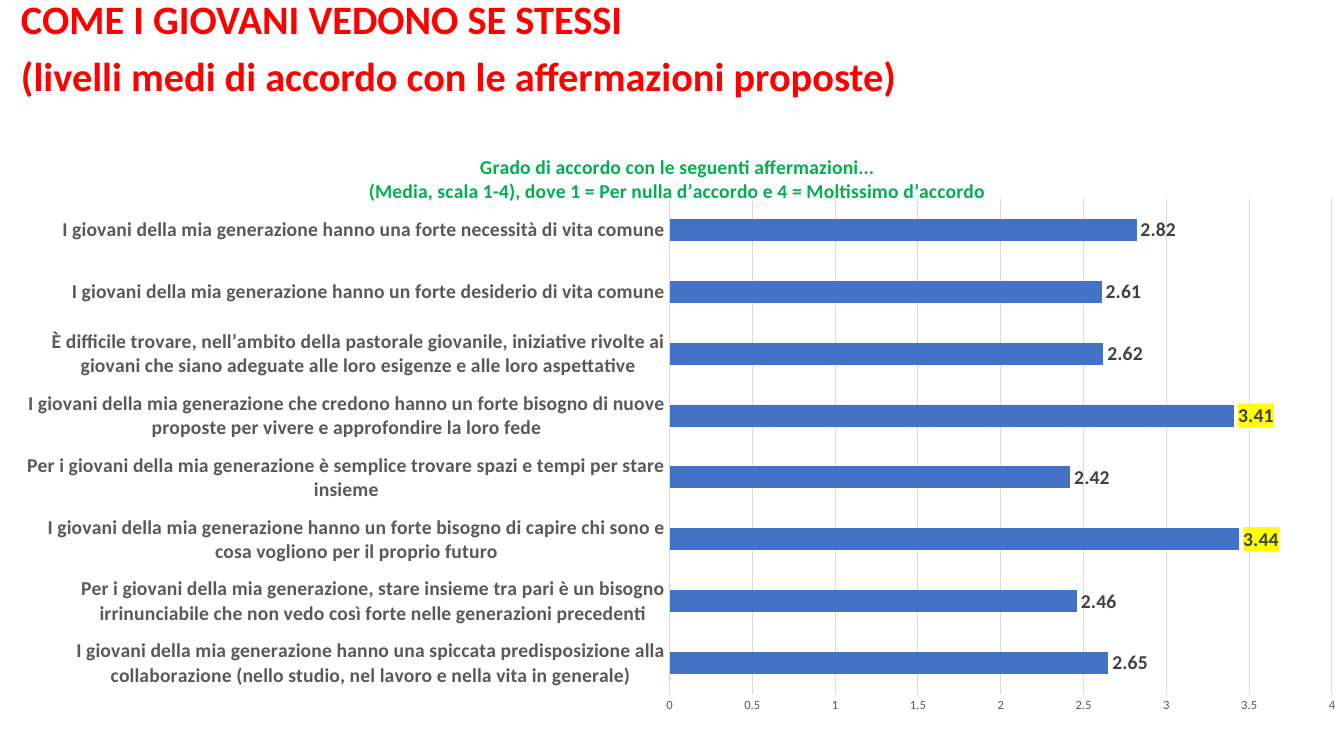
from lxml import etree
from pptx import Presentation
from pptx.chart.data import CategoryChartData
from pptx.dml.color import RGBColor
from pptx.enum.chart import XL_CHART_TYPE as ChartType, XL_LABEL_POSITION as LabelPos
from pptx.enum.chart import XL_TICK_MARK as TickMark
from pptx.enum.text import MSO_ANCHOR as Anchor
from pptx.oxml import parse_xml
from pptx.oxml.ns import nsdecls, qn
from pptx.util import Inches, Pt

FONT = "Calibri"
RED, GREEN, BLUE, YELLOW = "FF0000", "00B050", "4472C4", "FFFF00"
GRID, AXIS_TEXT, LABEL_TEXT = "D9D9D9", "595959", "404040"

# Statements from the bottom bar to the top one
STATEMENTS = [
    ("I giovani della mia generazione hanno una spiccata predisposizione alla "
     "collaborazione (nello studio, nel lavoro e nella vita in generale)", 2.65),
    ("Per i giovani della mia generazione, stare insieme tra pari è un bisogno "
     "irrinunciabile che non vedo così forte nelle generazioni precedenti", 2.46),
    ("I giovani della mia generazione hanno un forte bisogno di capire chi sono e "
     "cosa vogliono per il proprio futuro", 3.44),
    ("Per i giovani della mia generazione è semplice trovare spazi e tempi per stare "
     "insieme", 2.42),
    ("I giovani della mia generazione che credono hanno un forte bisogno di nuove "
     "proposte per vivere e approfondire la loro fede", 3.41),
    ("È difficile trovare, nell’ambito della pastorale giovanile, iniziative rivolte ai "
     "giovani che siano adeguate alle loro esigenze e alle loro aspettative", 2.62),
    ("I giovani della mia generazione hanno un forte desiderio di vita comune", 2.61),
    ("I giovani della mia generazione hanno una forte necessità di vita comune", 2.82),
]
HIGHLIGHT_FROM = 3


def color(hex_code):
    return RGBColor.from_string(hex_code)


def style_font(font, size, hex_code, bold=False):
    font.name, font.size, font.bold = FONT, Pt(size), bold
    font.color.rgb = color(hex_code)


def add_text(paragraph, text, **style):
    run = paragraph.add_run()
    run.text = text
    style_font(run.font, **style)


def add_heading(slide, left, top, width, height):
    frame = slide.shapes.add_textbox(left, top, width, height).text_frame
    frame.word_wrap = True
    frame.vertical_anchor = Anchor.MIDDLE
    heading = frame.paragraphs[0]
    heading.line_spacing = 0.9
    add_text(heading, "COME I GIOVANI VEDONO SE STESSI", size=28.8, hex_code=RED, bold=True)
    heading.add_line_break()
    add_text(heading, "(livelli medi di accordo con le affermazioni proposte)",
             size=28.8, hex_code=RED, bold=True)
    # The larger closing space opens up the second line
    add_text(heading, " ", size=39.6, hex_code=RED, bold=True)


def set_plot_area(chart, **fractions):
    plot_area = chart._chartSpace.chart.plotArea
    for old in plot_area.findall(qn("c:layout")):
        plot_area.remove(old)
    layout = parse_xml(f"<c:layout {nsdecls('c')}><c:manualLayout/></c:layout>")
    settings = {"layoutTarget": "inner", "xMode": "edge", "yMode": "edge", **fractions}
    for tag, value in settings.items():
        etree.SubElement(layout[0], qn(f"c:{tag}"), val=str(value))
    plot_area.insert(0, layout)


def highlight_label(point):
    label = point.data_label
    style_font(label.font, 14, LABEL_TEXT, bold=True)
    label.position = LabelPos.OUTSIDE_END
    fill = parse_xml(f"<c:spPr {nsdecls('c', 'a')}><a:solidFill>"
                     f'<a:srgbClr val="{YELLOW}"/></a:solidFill></c:spPr>')
    label._dLbl.find(qn("c:txPr")).addprevious(fill)


def style_axes(chart):
    statements, scores = chart.category_axis, chart.value_axis
    for axis, size, bold in ((statements, 14, True), (scores, 9, False)):
        axis.major_tick_mark = axis.minor_tick_mark = TickMark.NONE
        style_font(axis.tick_labels.font, size, AXIS_TEXT, bold)
    scores.minimum_scale, scores.maximum_scale, scores.major_unit = 0, 4, 0.5
    scores.format.line.fill.background()
    for line in (statements.format.line, scores.major_gridlines.format.line):
        line.color.rgb = color(GRID)
        line.width = Pt(0.75)


def add_agreement_chart(slide, left, top, width, height):
    data = CategoryChartData()
    data.categories = [statement for statement, _ in STATEMENTS]
    data.add_series("Media", [score for _, score in STATEMENTS])
    chart = slide.shapes.add_chart(ChartType.BAR_CLUSTERED, left, top, width, height, data).chart
    style_font(chart.font, 10, "000000")
    chart.has_legend = False

    # Title
    title = chart.chart_title.text_frame
    lines = ("Grado di accordo con le seguenti affermazioni...",
             "(Media, scala 1-4), dove 1 = Per nulla d’accordo e 4 = Moltissimo d’accordo")
    for i, line in enumerate(lines):
        paragraph = title.add_paragraph() if i else title.paragraphs[0]
        add_text(paragraph, line, size=14, hex_code=GREEN, bold=True)

    style_axes(chart)
    set_plot_area(chart, x=0.494, y=0.111, w=0.497, h=0.834)

    # Bars and their values
    plot = chart.plots[0]
    plot.gap_width = 182
    plot.vary_by_categories = False
    bars = plot.series[0]
    bars.format.fill.solid()
    bars.format.fill.fore_color.rgb = color(BLUE)
    labels = bars.data_labels
    labels.show_value = True
    labels.position = LabelPos.OUTSIDE_END
    style_font(labels.font, 14, LABEL_TEXT, bold=True)
    for i, (_, score) in enumerate(STATEMENTS):
        if score > HIGHLIGHT_FROM:
            highlight_label(bars.points[i])


def main():
    deck = Presentation()
    deck.slide_width, deck.slide_height = Inches(13.33), Inches(7.5)
    slide = deck.slides.add_slide(deck.slide_layouts[6])
    add_heading(slide, Inches(0.11), Inches(-0.08), Inches(12.99), Inches(1.18))
    add_agreement_chart(slide, Inches(0.11), Inches(1.32), Inches(13.22), Inches(5.89))
    deck.save("out.pptx")


if __name__ == "__main__":
    main()
